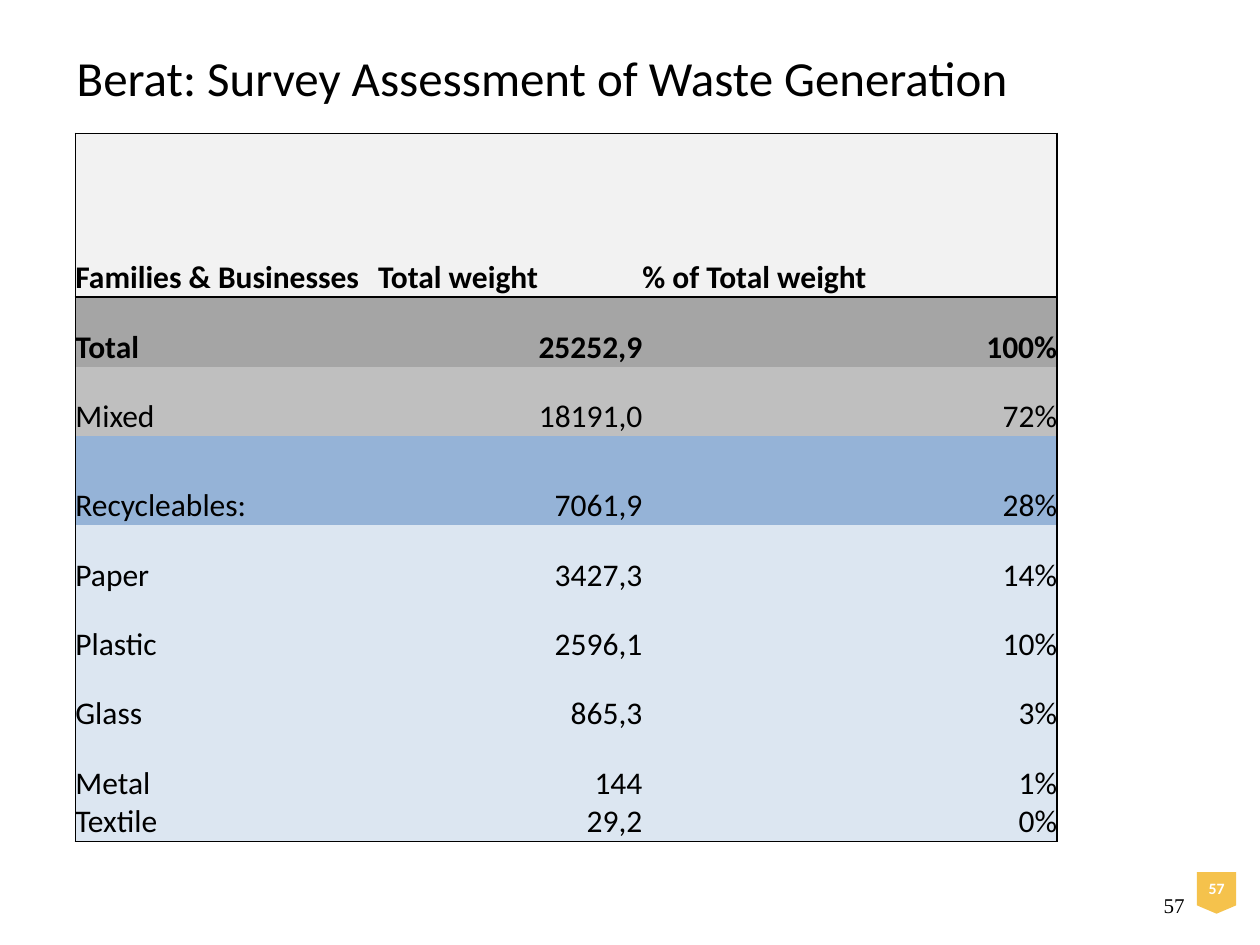
from lxml.etree import SubElement
from pptx import Presentation
from pptx.dml.color import RGBColor
from pptx.enum.shapes import MSO_SHAPE
from pptx.enum.text import MSO_ANCHOR, MSO_AUTO_SIZE, PP_ALIGN
from pptx.oxml.ns import qn
from pptx.util import Cm, Pt

COLORS = {
    "black": "000000", "white": "FFFFFF", "badge": "F5C24C",
    "header": "F2F2F2", "total": "A5A5A5", "mixed": "BFBFBF",
    "recycleables": "95B3D7", "material": "DCE6F1",
}


def write(paragraph, text, size, align, color="black", font="Calibri", bold=False):
    paragraph.alignment = align
    run = paragraph.add_run()
    run.text = text
    run.font.name = font
    run.font.size = Pt(size)
    run.font.bold = bold
    run.font.color.rgb = RGBColor.from_string(COLORS[color])


def set_border(cell, side, visible):
    line = SubElement(cell._tc.get_or_add_tcPr(), qn(f"a:ln{side}"), w=str(Pt(1)))
    if visible:
        fill = SubElement(line, qn("a:solidFill"))
        SubElement(fill, qn("a:srgbClr"), val=COLORS["black"])
    else:
        SubElement(line, qn("a:noFill"))


prs = Presentation()
prs.slide_width, prs.slide_height = Cm(25.4), Cm(19.05)
slide = prs.slides.add_slide(prs.slide_layouts[5])

# Footer band and page badge
band = slide.shapes.add_shape(MSO_SHAPE.RECTANGLE, Cm(0), Cm(16.79), Cm(25.4), Cm(2.26))
badge = slide.shapes.add_shape(
    MSO_SHAPE.FLOWCHART_OFFPAGE_CONNECTOR, Cm(24.13), Cm(17.58), Cm(0.79), Cm(0.84))
for part, color in ((band, "white"), (badge, "badge")):
    part.shadow.inherit = False
    part.fill.solid()
    part.fill.fore_color.rgb = RGBColor.from_string(COLORS[color])
band.line.color.rgb = RGBColor.from_string(COLORS["white"])
band.line.width = Pt(1)
badge.line.fill.background()
badge_text = badge.text_frame
badge_text.word_wrap = False
badge_text.vertical_anchor = MSO_ANCHOR.MIDDLE
badge_text.margin_left = badge_text.margin_right = Cm(0.18)
badge_text.margin_top = badge_text.margin_bottom = Cm(0.1)
write(badge_text.paragraphs[0], "57", 9, PP_ALIGN.CENTER, "white", bold=True)

# Title
title = slide.shapes.title
title.left, title.top, title.width, title.height = Cm(0.33), Cm(0.84), Cm(21.41), Cm(3.02)
title.text_frame.auto_size = MSO_AUTO_SIZE.NONE
title.text_frame.vertical_anchor = MSO_ANCHOR.TOP
write(title.text_frame.paragraphs[0], "Berat: Survey Assessment of Waste Generation ",
      28, PP_ALIGN.CENTER)

# Waste table: fill, row height in cm, cell texts
waste_rows = [
    ("header", 3.3, ("Families & Businesses", "Total weight", "% of Total weight")),
    ("total", 1.4, ("Total", "25252,9", "100%")),
    ("mixed", 1.4, ("Mixed", "18191,0", "72%")),
    ("recycleables", 1.8, ("Recycleables:", "7061,9", "28%")),
    ("material", 1.4, ("Paper", "3427,3", "14%")),
    ("material", 1.4, ("Plastic", "2596,1", "10%")),
    ("material", 1.4, ("Glass", "865,3", "3%")),
    ("material", 1.4, ("Metal", "144", "1%")),
    ("material", 0.51, ("Textile", "29,2", "0%")),
]
column_widths = (6.1, 5.33, 8.36)
last_row, last_col = len(waste_rows) - 1, len(column_widths) - 1
waste = slide.shapes.add_table(
    len(waste_rows), len(column_widths), Cm(1.52), Cm(2.69),
    Cm(sum(column_widths)), Cm(sum(height for _, height, _ in waste_rows))).table
waste.first_row = waste.horz_banding = False
for column, width in zip(waste.columns, column_widths):
    column.width = Cm(width)

for r, (fill, height, texts) in enumerate(waste_rows):
    waste.rows[r].height = Cm(height)
    for c, text in enumerate(texts):
        cell = waste.cell(r, c)
        cell.margin_left = cell.margin_right = cell.margin_top = cell.margin_bottom = 0
        cell.vertical_anchor = MSO_ANCHOR.BOTTOM
        # Outer frame plus the rule under the header
        set_border(cell, "L", c == 0)
        set_border(cell, "R", c == last_col)
        set_border(cell, "T", r in (0, 1))
        set_border(cell, "B", r in (0, last_row))
        cell.fill.solid()
        cell.fill.fore_color.rgb = RGBColor.from_string(COLORS[fill])
        align = PP_ALIGN.RIGHT if r and c else PP_ALIGN.LEFT
        write(cell.text_frame.paragraphs[0], text, 18, align, bold=r < 2)

# Page number
page = slide.shapes.add_textbox(Cm(18.21), Cm(17.35), Cm(5.92), Cm(1.27)).text_frame
page.word_wrap = True
page.vertical_anchor = MSO_ANCHOR.BOTTOM
write(page.paragraphs[0], "57", 12, PP_ALIGN.RIGHT, font="Times New Roman")

prs.save("out.pptx")
